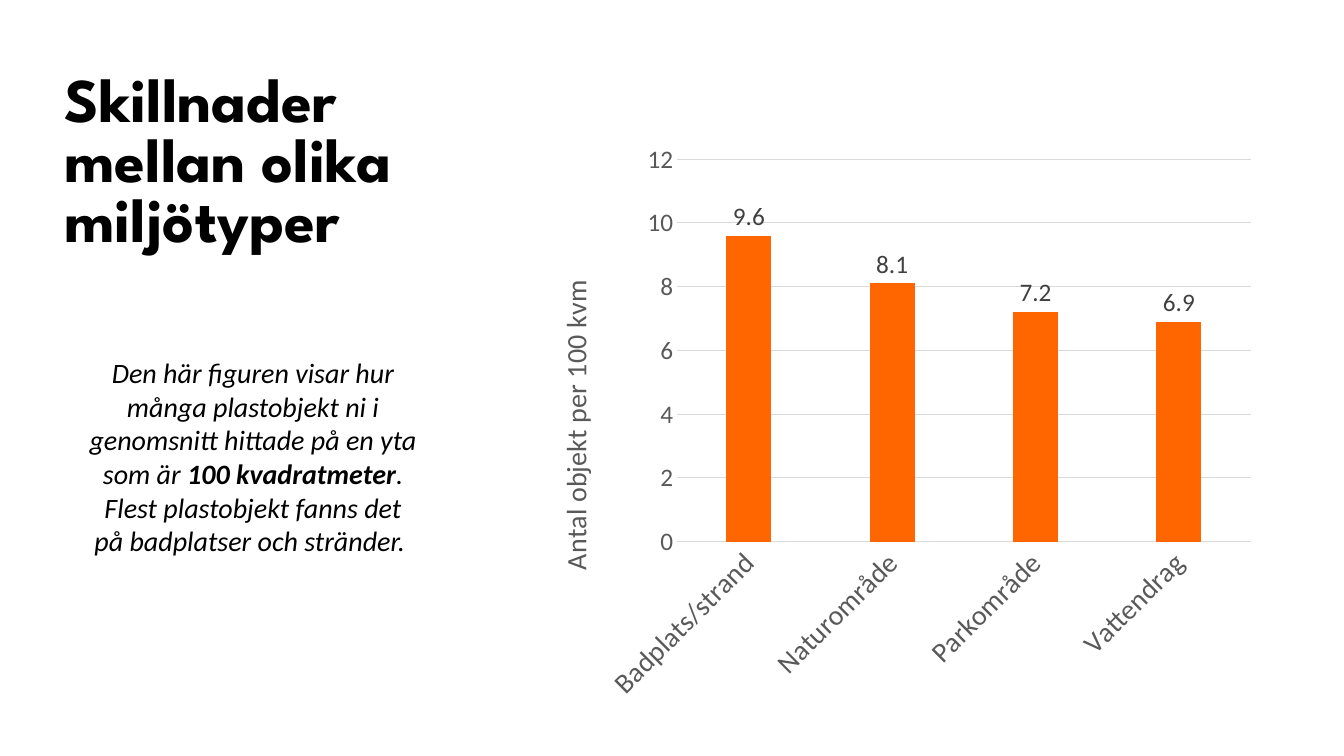
from lxml import etree
from pptx import Presentation
from pptx.chart import data as cd
from pptx.dml.color import RGBColor
from pptx.enum import chart as ch, text
from pptx.oxml import ns
from pptx.util import Pt

BLACK = RGBColor(0x00, 0x00, 0x00)
ORANGE = RGBColor(0xFF, 0x66, 0x00)
AXIS_GREY = RGBColor(0x59, 0x59, 0x59)
LABEL_GREY = RGBColor(0x40, 0x40, 0x40)
LINE_GREY = RGBColor(0xD9, 0xD9, 0xD9)

OBJECTS_PER_100_SQM = {"Badplats/strand": 9.6, "Naturområde": 8.1,
                       "Parkområde": 7.2, "Vattendrag": 6.9}


def set_attrs(obj, values):
    for name, value in values.items():
        setattr(obj, name, value)


def set_font(font, name, size, color, **style):
    set_attrs(font, dict(name=name, size=Pt(size), **style))
    font.color.rgb = color


def set_grey_line(line):
    line.color.rgb = LINE_GREY
    line.width = Pt(0.75)


def set_layout(el, index, **fractions):
    """Place a chart part by fractions of the chart area."""
    layout = el.find(ns.qn("c:layout"))
    if layout is None:
        layout = etree.Element(ns.qn("c:layout"))
        el.insert(index, layout)
    manual = etree.SubElement(layout, ns.qn("c:manualLayout"))
    modes = {"xMode": "edge", "yMode": "edge"}
    if "w" in fractions:
        modes = {"layoutTarget": "inner", **modes}
    for tag, value in {**modes, **fractions}.items():
        etree.SubElement(manual, ns.qn("c:" + tag)).set("val", str(value))


def add_text(slide, box, runs, font, frame, paragraph):
    tf = slide.shapes.add_textbox(*map(Pt, box)).text_frame
    set_attrs(tf, dict(word_wrap=True, **frame))
    p = tf.paragraphs[0]
    set_attrs(p, paragraph)
    for wording, bold in runs:
        r = p.add_run()
        r.text = wording
        set_font(r.font, color=BLACK, bold=bold, **font)


def add_heading(slide, box):
    add_text(slide, box, [("Skillnader mellan olika miljötyper", True)],
             dict(name="League Spartan", size=44.4),
             dict(vertical_anchor=text.MSO_ANCHOR.BOTTOM),
             dict(line_spacing=0.8))


def add_explanation(slide, box):
    runs = [("Den här figuren visar hur många plastobjekt ni i genomsnitt "
             "hittade på en yta som är ", False),
            ("100 kvadratmeter", True),
            (". Flest plastobjekt fanns det på badplatser och stränder. ", False)]
    add_text(slide, box, runs, dict(name="Calibri", size=20, italic=True),
             dict(auto_size=text.MSO_AUTO_SIZE.SHAPE_TO_FIT_TEXT),
             dict(alignment=text.PP_ALIGN.CENTER))


def add_object_chart(slide, box):
    data = cd.CategoryChartData(number_format="0.0")
    data.categories = list(OBJECTS_PER_100_SQM)
    data.add_series("Series 1", list(OBJECTS_PER_100_SQM.values()))
    chart = slide.shapes.add_chart(ch.XL_CHART_TYPE.COLUMN_CLUSTERED,
                                   *map(Pt, box), data).chart
    set_attrs(chart, dict(has_legend=False, has_title=False))
    set_font(chart.font, "Calibri", 10, BLACK)

    # Columns and value labels
    plot = chart.plots[0]
    set_attrs(plot, dict(gap_width=219, overlap=-27,
                         vary_by_categories=False, has_data_labels=True))
    fill = plot.series[0].format.fill
    fill.solid()
    fill.fore_color.rgb = ORANGE
    labels = plot.data_labels
    set_attrs(labels, dict(show_value=True, number_format="0.0",
                           number_format_is_linked=False,
                           position=ch.XL_LABEL_POSITION.OUTSIDE_END))
    set_font(labels.font, "Calibri", 18, LABEL_GREY)

    # Axes
    cat, val = chart.category_axis, chart.value_axis
    for axis, size in ((cat, 20), (val, 18)):
        set_attrs(axis, dict(major_tick_mark=ch.XL_TICK_MARK.NONE,
                             minor_tick_mark=ch.XL_TICK_MARK.NONE))
        set_font(axis.tick_labels.font, "Calibri", size, AXIS_GREY)
    set_grey_line(cat.format.line)
    body = cat._element.find(ns.qn("c:txPr")).find(ns.qn("a:bodyPr"))
    body.set("rot", "-2700000")
    body.set("vert", "horz")
    set_attrs(val, dict(minimum_scale=0, maximum_scale=12, major_unit=2,
                        has_major_gridlines=True))
    set_attrs(val.tick_labels, dict(number_format="0",
                                    number_format_is_linked=False))
    val.format.line.fill.background()
    set_grey_line(val.major_gridlines.format.line)

    # Value axis title
    title = val.axis_title
    tf = title.text_frame
    r = tf.paragraphs[0].add_run()
    r.text = "Antal objekt per 100 kvm"
    set_font(r.font, "Calibri", 20, AXIS_GREY, bold=False)
    body = tf._txBody.find(ns.qn("a:bodyPr"))
    body.set("rot", "-5400000")
    body.set("vert", "horz")
    set_layout(title._element, 1, x=0.04, y=0.25)
    set_layout(chart._chartSpace.chart.plotArea, 0, x=0.21, y=0.05, w=0.77, h=0.66)


def main():
    prs = Presentation()
    set_attrs(prs, dict(slide_width=Pt(960), slide_height=Pt(540)))
    slide = prs.slides.add_slide(prs.slide_layouts[6])
    add_heading(slide, (39, 50, 333, 135))
    add_explanation(slide, (55.5, 250.5, 250.5, 152.5))
    add_object_chart(slide, (372, 93, 532, 414))
    prs.save("out.pptx")


if __name__ == "__main__":
    main()
